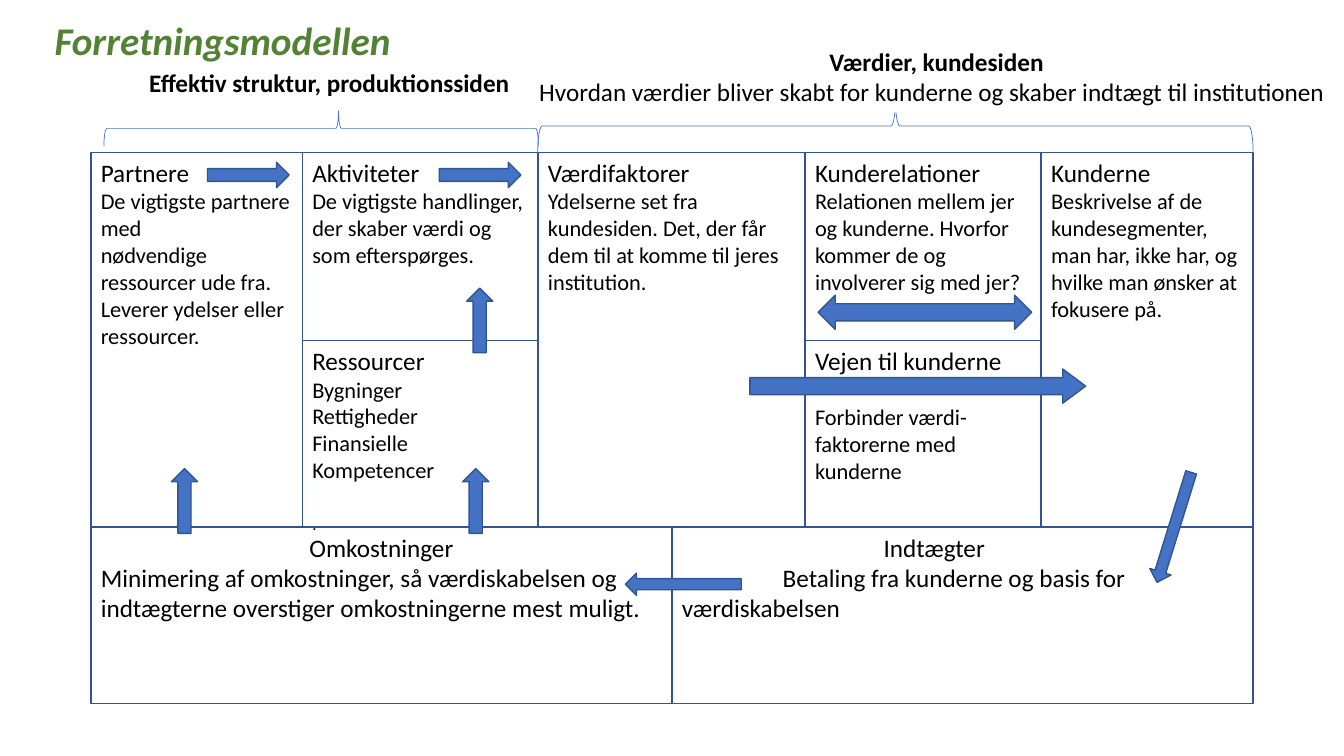
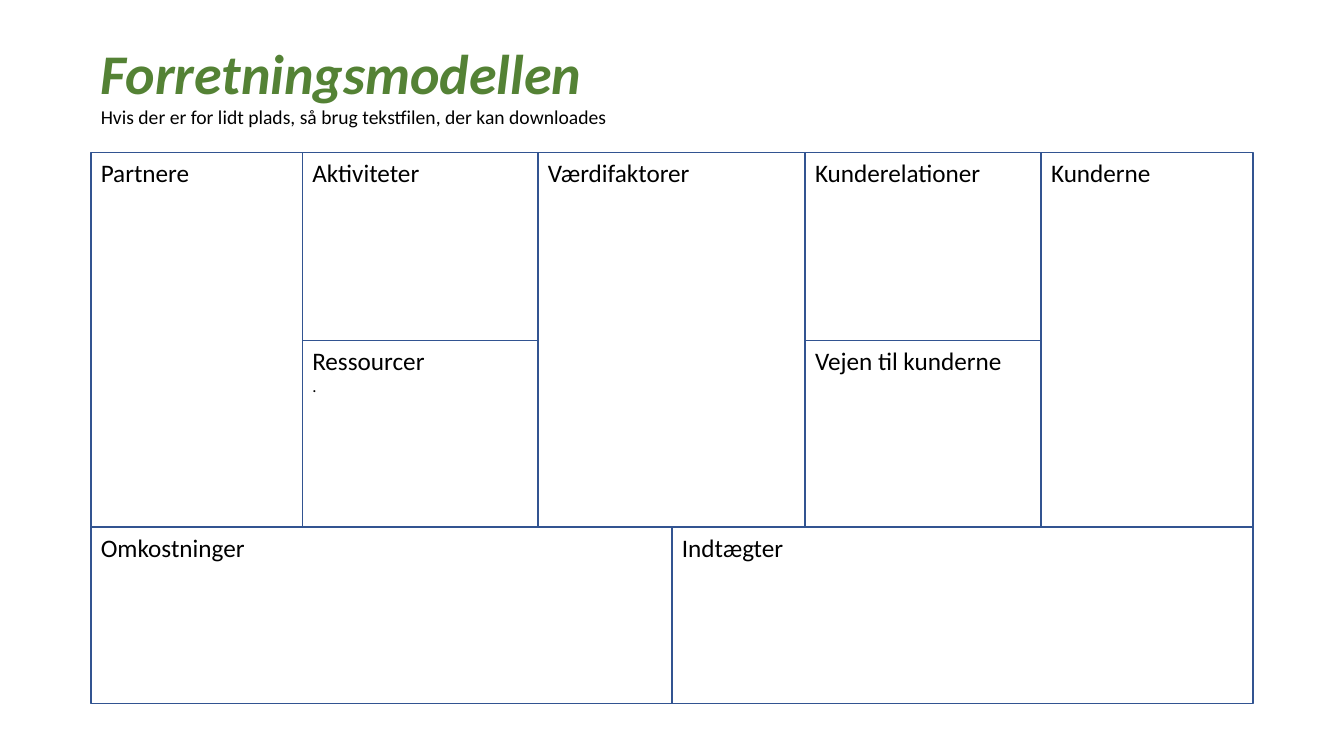
from pptx import Presentation
from pptx.dml.color import RGBColor
from pptx.enum import shapes, text
from pptx.util import Cm, Pt

COLORS = {"title": "548235", "text": "000000", "outline": "325491",
          "accent": "4472C4", "paper": "FFFFFF"}
FONT = "Calibri"
KIND = shapes.MSO_SHAPE
LEFT, CENTER = text.PP_ALIGN.LEFT, text.PP_ALIGN.CENTER


def write_text(frame, paragraphs):
    """Fill a frame with (text, format) pairs; lengths in cm, sizes in points."""
    frame.word_wrap = True
    frame.vertical_anchor = text.MSO_ANCHOR.TOP
    for index, (wording, style) in enumerate(paragraphs):
        paragraph = frame.paragraphs[0] if index == 0 else frame.add_paragraph()
        paragraph.text = wording
        paragraph.alignment = style.get("align", LEFT)
        if "before" in style:
            paragraph.space_before = Pt(style["before"])
        for attribute in ("marL", "indent"):
            if attribute in style:
                paragraph._p.get_or_add_pPr().set(attribute, str(Cm(style[attribute])))
        font = paragraph.runs[0].font
        values = {"name": FONT, "size": Pt(style.get("size", 18)),
                  "bold": style.get("bold", False), "italic": style.get("italic", False)}
        for name, value in values.items():
            setattr(font, name, value)
        font.color.rgb = RGBColor.from_string(COLORS[style.get("color", "text")])


def add_shape(slide, kind, box, fill=None, line="outline", width=1, rotation=0, adjust=()):
    shape = slide.shapes.add_shape(kind, *map(Cm, box))
    shape.shadow.inherit = False
    shape.rotation = rotation
    for index, value in enumerate(adjust):
        shape.adjustments[index] = value
    if fill:
        shape.fill.solid()
        shape.fill.fore_color.rgb = RGBColor.from_string(COLORS[fill])
    else:
        shape.fill.background()
    if line:
        shape.line.color.rgb = RGBColor.from_string(COLORS[line])
        shape.line.width = Pt(width)
    else:
        shape.line.fill.background()
    return shape


presentation = Presentation()
presentation.slide_width, presentation.slide_height = Cm(33.87), Cm(19.05)

# Canvas grid: column edges, the split of the bottom row, and row edges
columns = [2.29, 7.62, 13.56, 20.29, 26.24, 31.58]
middle = (columns[0] + columns[-1]) / 2
rows = [3.84, 8.58, 13.28, 17.73]
small = {"size": 16}
dot = (".", {"size": 12})

# Heading, left, right, top row, bottom row, heading format, explanation
cells = [
    ("Partnere", columns[0], columns[1], 0, 2, {}, [
        ("De vigtigste partnere med", small),
        ("nødvendige ressourcer ude fra. Leverer ydelser eller ressourcer.", small)]),
    ("Omkostninger", columns[0], middle, 2, 3, {"align": CENTER}, [
        ("Minimering af omkostninger, så værdiskabelsen og indtægterne "
         "overstiger omkostningerne mest muligt.", {})]),
    ("Indtægter", middle, columns[5], 2, 3, {"marL": 5.08, "indent": 0}, [
        ("Betaling fra kunderne og basis for værdiskabelsen", {"marL": 0, "indent": 2.54})]),
    ("Aktiviteter", columns[1], columns[2], 0, 1, {}, [
        ("De vigtigste handlinger, der skaber værdi og som efterspørges.", small)]),
    ("Ressourcer", columns[1], columns[2], 1, 2, {}, [
        ("Bygninger", small), ("Rettigheder", small), ("Finansielle", small),
        ("Kompetencer", small), (dot[0], {**dot[1], "before": 22})]),
    ("Kunderelationer", columns[3], columns[4], 0, 1, {}, [
        ("Relationen mellem jer og kunderne. Hvorfor kommer de og "
         "involverer sig med jer?", small)]),
    ("Vejen til kunderne", columns[3], columns[4], 1, 2, {}, [
        ("Forbinder værdi-faktorerne med kunderne", {"size": 16, "before": 19.5})]),
    ("Værdifaktorer", columns[2], columns[3], 0, 2, {}, [
        ("Ydelserne set fra kundesiden. Det, der får dem til at komme til "
         "jeres institution.", small)]),
    ("Kunderne", columns[4], columns[5], 0, 2, {}, [
        ("Beskrivelse af de kundesegmenter, man har, ikke har, og hvilke "
         "man ønsker at fokusere på.", small)]),
]

# Title and canvas, first explained and then left open for notes
slides = []
for title_box, title_size, explained in [
        ((1.12, 0.28, 10.31, 1.45), 28, True),
        ((2.29, 0.84, 13.46, 1.98), 40, False)]:
    slide = presentation.slides.add_slide(presentation.slide_layouts[5])
    slides.append(slide)
    title = slide.shapes.title
    title.left, title.top, title.width, title.height = map(Cm, title_box)
    write_text(title.text_frame, [("Forretningsmodellen", {
        "size": title_size, "bold": True, "italic": True, "color": "title"})])
    for heading, left, right, top, bottom, style, details in cells:
        box = (left, rows[top], right - left, rows[bottom] - rows[top])
        cell = add_shape(slide, KIND.RECTANGLE, box)
        if explained:
            paragraphs = [(heading, style)] + details
        else:
            paragraphs = [(heading, {})] + ([dot] if heading == "Ressourcer" else [])
        write_text(cell.text_frame, paragraphs)
explained_slide, open_slide = slides

# Braces and the headings of the two sides
add_shape(explained_slide, KIND.LEFT_BRACE, (21.89, -5.84, 1.35, 18.03),
          line="accent", width=0.5, rotation=90)
add_shape(explained_slide, KIND.RIGHT_BRACE, (7.65, -2.24, 0.89, 10.95),
          line="accent", width=0.5, rotation=270, adjust=(0.08, 0.54))
customer_side = add_shape(explained_slide, KIND.RECTANGLE, (13.34, 1.04, 20.53, 1.8),
                          fill="paper", line=None)
write_text(customer_side.text_frame, [
    ("Værdier, kundesiden", {"bold": True, "align": CENTER}),
    ("Hvordan værdier bliver skabt for kunderne og skaber indtægt til institutionen", {})])
production_side = explained_slide.shapes.add_textbox(Cm(3.51), Cm(1.57), Cm(10.06), Cm(1.02))
write_text(production_side.text_frame, [("Effektiv struktur, produktionssiden", {"bold": True})])

# Arrows between the fields
for kind, box, rotation, adjust in [
        (KIND.RIGHT_ARROW, (18.9, 9.3, 8.46, 0.86), 0, (0.5, 0.67)),
        (KIND.LEFT_RIGHT_ARROW, (20.62, 7.44, 5.38, 0.86), 0, ()),
        (KIND.DOWN_ARROW, (29.31, 11.84, 0.56, 2.9), 17.2, ()),
        (KIND.UP_ARROW, (16.94, 13.26, 0.56, 2.92), 270, ()),
        (KIND.RIGHT_ARROW, (5.23, 4.09, 2.06, 0.64), 0, ()),
        (KIND.RIGHT_ARROW, (11.07, 4.09, 2.06, 0.64), 0, ()),
        (KIND.UP_ARROW, (4.32, 11.81, 0.66, 1.63), 0, ()),
        (KIND.UP_ARROW, (11.66, 11.81, 0.66, 1.63), 0, ()),
        (KIND.UP_ARROW, (11.76, 7.26, 0.66, 1.63), 0, ())]:
    add_shape(explained_slide, kind, box, fill="accent", rotation=rotation, adjust=adjust)

hint = open_slide.shapes.add_textbox(Cm(2.29), Cm(2.52), Cm(14), Cm(0.85))
write_text(hint.text_frame, [
    ("Hvis der er for lidt plads, så brug tekstfilen, der kan downloades", {"size": 14})])

presentation.save("out.pptx")
